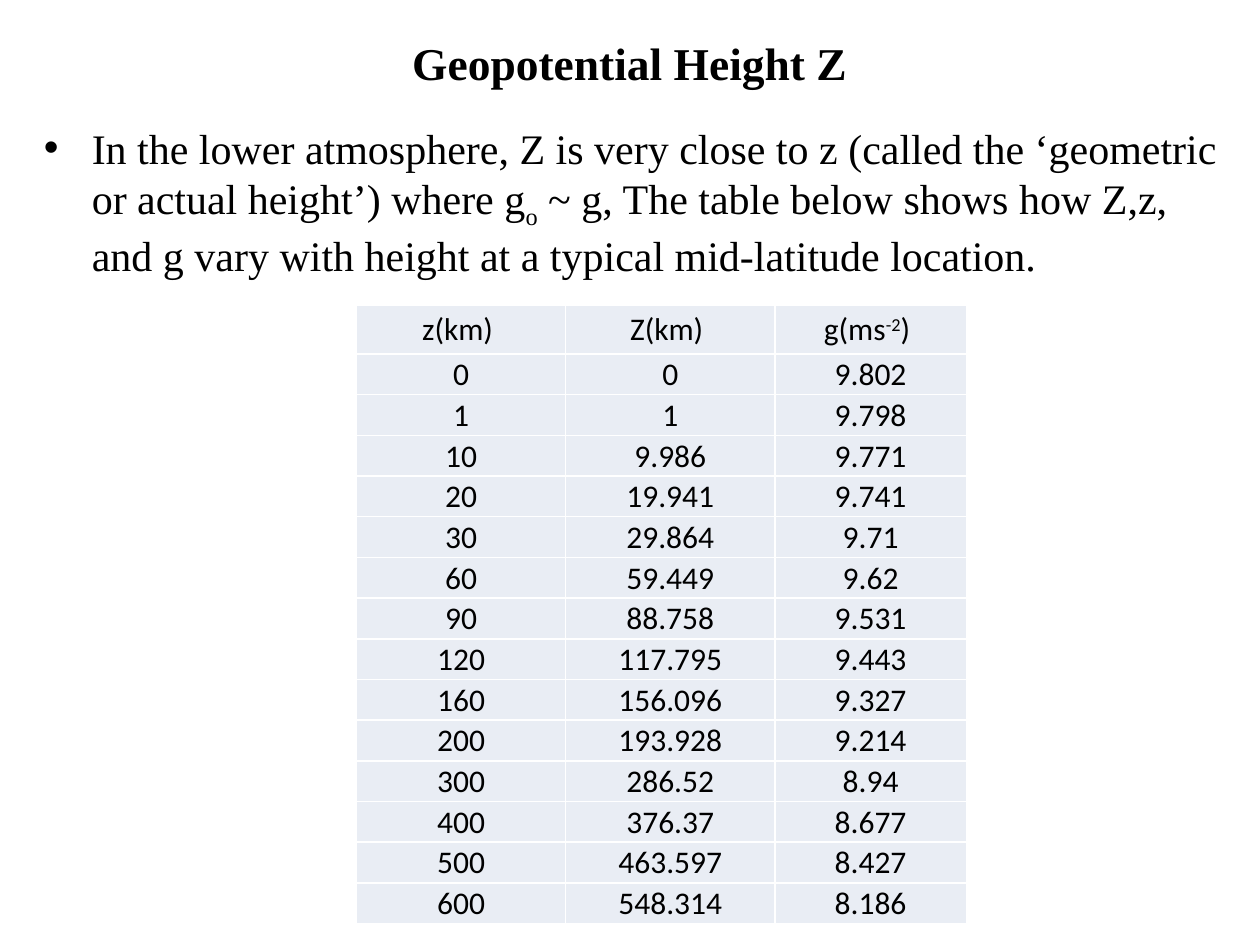
from dataclasses import dataclass

from lxml import etree
from pptx import Presentation
from pptx.dml.color import RGBColor
from pptx.enum.text import MSO_ANCHOR, PP_ALIGN
from pptx.oxml.ns import qn
from pptx.util import Inches, Pt

CENTER, LEFT = PP_ALIGN.CENTER, PP_ALIGN.LEFT
MIDDLE, TOP = MSO_ANCHOR.MIDDLE, MSO_ANCHOR.TOP

PAGE_WIDTH, PAGE_HEIGHT = 10, 7.5
BLACK, WHITE, CELL_FILL = "000000", "FFFFFF", "E9EDF4"
HANGING_INDENT = 0.38

TABLE_LEFT, TABLE_TOP, TABLE_HEIGHT = 2.83, 2.42, 4.91
COLUMN_WIDTHS = (1.66, 1.66, 1.52)
HEADER_HEIGHT = 0.39
CELL_MARGINS = {"margin_left": 0.01, "margin_right": 0.01,
                "margin_top": 0.01, "margin_bottom": 0}

TITLE_FORMAT = {"name": "Times New Roman", "size": Pt(26), "bold": True}
BODY_FORMAT = {"name": "Times New Roman", "size": Pt(24)}
CELL_FORMAT = {"name": "Calibri", "size": Pt(18), "bold": False}


@dataclass(frozen=True)
class Span:
    text: str
    baseline: int = 0  # percent; negative is subscript


@dataclass(frozen=True)
class Area:
    left: float
    top: float
    width: float
    height: float

    def lengths(self) -> list:
        return [Inches(v) for v in (self.left, self.top, self.width, self.height)]


TITLE = [Span("Geopotential Height Z")]
BODY = [
    Span("In the lower atmosphere, Z is very close to z (called the "
         "‘geometric or actual height’) where g"),
    Span("o", -25),
    Span(" ~ g, The table below shows how Z,z, and g vary with height "
         "at a typical mid-latitude location."),
]
HEADER = [[Span("z(km) ")], [Span("Z(km) ")],
          [Span("g(ms"), Span("-2", 30), Span(") ")]]
HEIGHTS = [
    ("0", "0", "9.802"),
    ("1", "1", "9.798"),
    ("10", "9.986", "9.771"),
    ("20", "19.941", "9.741"),
    ("30", "29.864", "9.71"),
    ("60", "59.449", "9.62"),
    ("90", "88.758", "9.531"),
    ("120", "117.795", "9.443"),
    ("160", "156.096", "9.327"),
    ("200", "193.928", "9.214"),
    ("300", "286.52", "8.94"),
    ("400", "376.37", "8.677"),
    ("500", "463.597", "8.427"),
    ("600", "548.314", "8.186"),
]


def color(value: str) -> RGBColor:
    return RGBColor.from_string(value)


def write_spans(para, spans: list[Span], font_format: dict, align) -> None:
    para.alignment = align
    for span in spans:
        run = para.add_run()
        run.text = span.text
        for name, value in font_format.items():
            setattr(run.font, name, value)
        run.font.color.rgb = color(BLACK)
        if span.baseline:
            run.font._element.set("baseline", str(span.baseline * 1000))


def add_bullet(para) -> None:
    properties = para._p.get_or_add_pPr()
    indent = Inches(HANGING_INDENT)
    properties.set("marL", str(indent))
    properties.set("indent", str(-indent))
    etree.SubElement(properties, qn("a:buFont")).set("typeface", "Arial")
    etree.SubElement(properties, qn("a:buChar")).set("char", "•")


def add_text(page, area: Area, spans: list[Span], font_format: dict,
             align, anchor, bullet: bool = False) -> None:
    frame = page.shapes.add_textbox(*area.lengths()).text_frame
    frame.word_wrap = True
    frame.vertical_anchor = anchor
    para = frame.paragraphs[0]
    if bullet:
        add_bullet(para)
    write_spans(para, spans, font_format, align)


def add_borders(cell) -> None:
    """Put a thin white line on each side; borders must precede the fill."""
    properties = cell._tc.get_or_add_tcPr()
    for side in ("lnL", "lnR", "lnT", "lnB"):
        line = etree.SubElement(properties, qn(f"a:{side}"), w=str(Pt(1)))
        fill = etree.SubElement(line, qn("a:solidFill"))
        etree.SubElement(fill, qn("a:srgbClr"), val=WHITE)


def fill_cell(cell, spans: list[Span]) -> None:
    for name, value in CELL_MARGINS.items():
        setattr(cell, name, Inches(value))
    cell.vertical_anchor = MIDDLE
    add_borders(cell)
    cell.fill.solid()
    cell.fill.fore_color.rgb = color(CELL_FILL)
    write_spans(cell.text_frame.paragraphs[0], spans, CELL_FORMAT, CENTER)


def add_height_table(page) -> None:
    rows = [HEADER] + [[[Span(value)] for value in row] for row in HEIGHTS]
    area = Area(TABLE_LEFT, TABLE_TOP, sum(COLUMN_WIDTHS), TABLE_HEIGHT)
    table = page.shapes.add_table(len(rows), len(COLUMN_WIDTHS), *area.lengths()).table
    table.first_row = table.horz_banding = False
    for column, width in zip(table.columns, COLUMN_WIDTHS):
        column.width = Inches(width)
    row_height = (TABLE_HEIGHT - HEADER_HEIGHT) / len(HEIGHTS)
    for index, row in enumerate(rows):
        table.rows[index].height = Inches(row_height if index else HEADER_HEIGHT)
        for cell, spans in zip(table.rows[index].cells, row):
            fill_cell(cell, spans)


def main() -> None:
    deck = Presentation()
    deck.slide_width, deck.slide_height = Inches(PAGE_WIDTH), Inches(PAGE_HEIGHT)
    page = deck.slides.add_slide(deck.slide_layouts[6])
    title_area = Area(0.05 * PAGE_WIDTH, 0.08, 0.9 * PAGE_WIDTH, 0.83)
    add_text(page, title_area, TITLE, TITLE_FORMAT, CENTER, MIDDLE)
    body_area = Area(0.25, 0.92, 9.59, 1.31)
    add_text(page, body_area, BODY, BODY_FORMAT, LEFT, TOP, bullet=True)
    add_height_table(page)
    deck.save("out.pptx")


if __name__ == "__main__":
    main()
